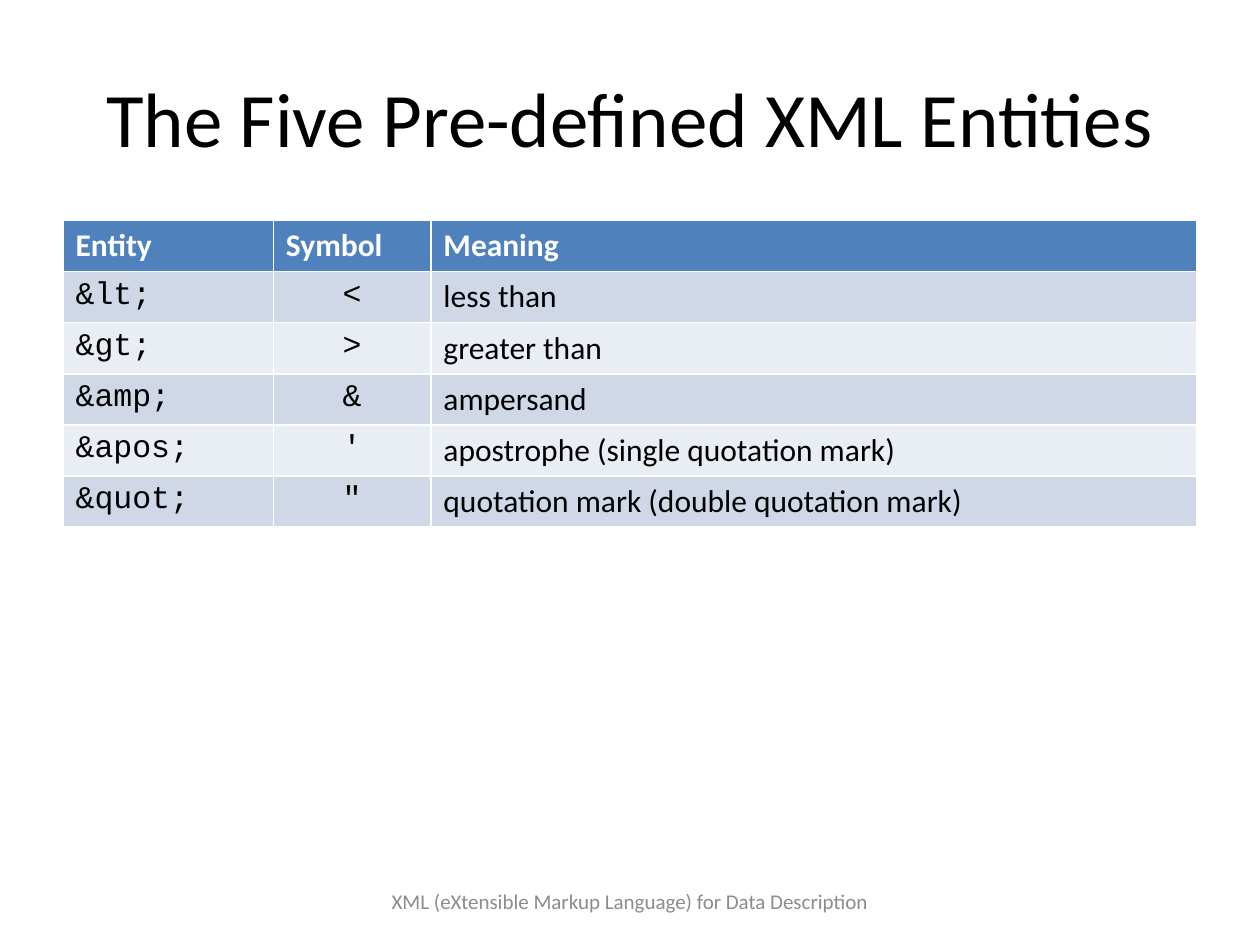
import pptx
import pptx.util
import pptx.dml.color
import pptx.enum.text

TITLE = "The Five Pre-defined XML Entities"
FOOTER = "XML (eXtensible Markup Language) for Data Description"
HEADINGS = ("Entity", "Symbol", "Meaning")
ENTITIES = [
    ("&lt;", "<", "less than"),
    ("&gt;", ">", "greater than"),
    ("&amp;", "&", "ampersand"),
    ("&apos;", "'", "apostrophe (single quotation mark)"),
    ("&quot;", '"', "quotation mark (double quotation mark)"),
]
COLORS = {
    "heading": "4F81BD",
    "odd": "D0D8E8",
    "even": "E9EDF4",
    "white": "FFFFFF",
    "black": "000000",
    "gray": "8C8C8C",
}
BODY, CODE = "Calibri", "Courier New"
WIDTH, HEIGHT = 10, 7.5
MARGIN = WIDTH * 0.05
COLUMNS = (1.67, 1.25, 6.08)
ROW_HEIGHT = 2.43 / (len(ENTITIES) + 1)
LEFT = pptx.enum.text.PP_ALIGN.LEFT
CENTER = pptx.enum.text.PP_ALIGN.CENTER
MIDDLE = pptx.enum.text.MSO_ANCHOR.MIDDLE


def rgb(name):
    return pptx.dml.color.RGBColor.from_string(COLORS[name])


def write(frame, text, size=18, font=BODY, color="black", bold=False, align=LEFT):
    paragraph = frame.paragraphs[0]
    paragraph.alignment = align
    run = paragraph.add_run()
    run.text = text
    run.font.size = pptx.util.Pt(size)
    run.font.name = font
    run.font.bold = bold
    run.font.color.rgb = rgb(color)


def inches(*lengths):
    return [pptx.util.Inches(length) for length in lengths]


def add_title(slide):
    title = slide.shapes.title
    title.left, title.top, title.width, title.height = inches(
        MARGIN, HEIGHT * 0.04, WIDTH - 2 * MARGIN, HEIGHT / 6)
    title.text_frame.vertical_anchor = MIDDLE
    write(title.text_frame, TITLE, size=44, align=CENTER)


def add_entities(slide):
    rows = [HEADINGS] + ENTITIES
    entities = slide.shapes.add_table(
        len(rows), len(COLUMNS),
        *inches(MARGIN, 1.75, sum(COLUMNS), ROW_HEIGHT * len(rows))).table
    for column, width in zip(entities.columns, COLUMNS):
        column.width = pptx.util.Inches(width)
    for r, row in enumerate(rows):
        entities.rows[r].height = pptx.util.Inches(ROW_HEIGHT)
        band = "heading" if r == 0 else "odd" if r % 2 else "even"
        for c, text in enumerate(row):
            cell = entities.cell(r, c)
            cell.fill.solid()
            cell.fill.fore_color.rgb = rgb(band)
            if r == 0:
                write(cell.text_frame, text, color="white", bold=True)
            else:
                write(cell.text_frame, text, font=BODY if c == 2 else CODE,
                      align=CENTER if c == 1 else LEFT)


def add_footer(slide):
    width = WIDTH * 0.433
    footer = slide.shapes.add_textbox(
        *inches((WIDTH - width) / 2, 6.95, width, 0.4)).text_frame
    footer.word_wrap = True
    footer.vertical_anchor = MIDDLE
    write(footer, FOOTER, size=12, color="gray", align=CENTER)


def main():
    deck = pptx.Presentation()
    deck.slide_width, deck.slide_height = inches(WIDTH, HEIGHT)
    slide = deck.slides.add_slide(deck.slide_layouts[5])
    add_title(slide)
    add_entities(slide)
    add_footer(slide)
    deck.save("out.pptx")


if __name__ == "__main__":
    main()
